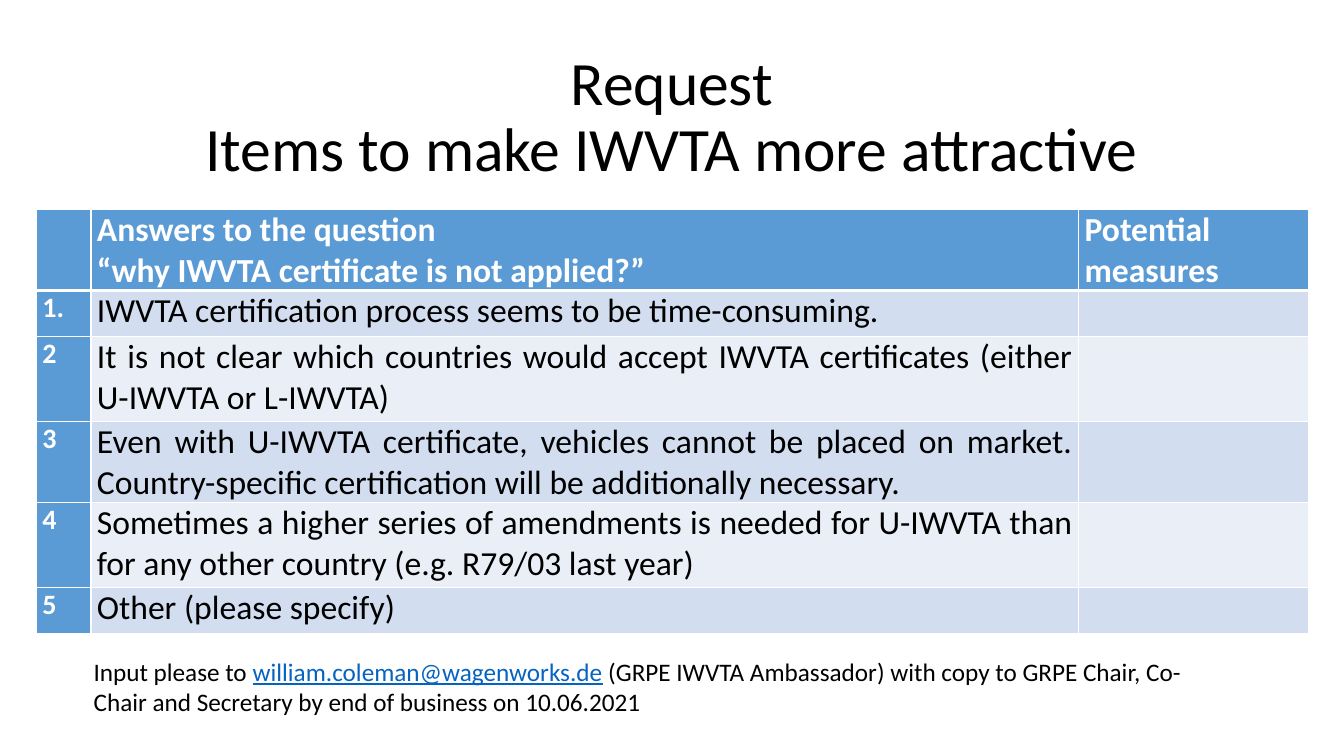
"""Build the slide that asks for items to make IWVTA more attractive."""
from dataclasses import dataclass

import lxml.etree
import pptx
import pptx.dml.color
import pptx.enum.text
import pptx.oxml.ns
import pptx.util

Pt = pptx.util.Pt
ALIGN = pptx.enum.text.PP_ALIGN
ANCHOR = pptx.enum.text.MSO_ANCHOR
COLORS = {
    "black": "000000",
    "white": "FFFFFF",
    "accent": "5B9BD5",
    "odd_row": "D2DEEF",
    "even_row": "EAEFF7",
    "address": "0563C1",
}


@dataclass
class Answer:
    number: str
    text: str
    height: float


HEADER_HEIGHT = 55
COLUMN_WIDTHS = (39, 705.5, 164)
HEADINGS = (
    ("Answers to the question", "“why IWVTA certificate is not applied?”"),
    ("Potential measures",),
)
ANSWERS = (
    Answer("1.", "IWVTA certification process seems to be time-consuming.", 33),
    Answer("2", "It is not clear which countries would accept IWVTA certificates "
           "(either U-IWVTA or L-IWVTA)", 60.5),
    Answer("3", "Even with U-IWVTA certificate, vehicles cannot be placed on market. "
           "Country-specific certification will be additionally necessary.", 58),
    Answer("4", "Sometimes a higher series of amendments is needed for U-IWVTA than "
           "for any other country (e.g. R79/03 last year)", 61),
    Answer("5", "Other (please specify)", 33),
)


def write(paragraph, text: str, size: float = 24, color: str = "black",
          bold: bool = False, underline: bool = False, align=None) -> None:
    if align is not None:
        paragraph.alignment = align
    run = paragraph.add_run()
    run.text = text
    run.font.name = "Calibri"
    run.font.size = Pt(size)
    run.font.bold = bold
    run.font.underline = underline
    run.font.color.rgb = pptx.dml.color.RGBColor.from_string(COLORS[color])


def add_text_frame(slide, left: float, top: float, width: float, height: float,
                   anchor=ANCHOR.TOP):
    box = slide.shapes.add_textbox(Pt(left), Pt(top), Pt(width), Pt(height))
    box.text_frame.word_wrap = True
    box.text_frame.vertical_anchor = anchor
    return box.text_frame


def add_border(cell, side: str, width: float) -> None:
    qn = pptx.oxml.ns.qn
    properties = cell._tc.get_or_add_tcPr()
    line = lxml.etree.SubElement(properties, qn(f"a:ln{side}"), w=str(Pt(width)))
    fill = lxml.etree.SubElement(line, qn("a:solidFill"))
    lxml.etree.SubElement(fill, qn("a:srgbClr"), val=COLORS["white"])


def format_cell(cell, fill: str, top: float, bottom: float) -> None:
    for side, width in (("L", 1), ("R", 1), ("T", top), ("B", bottom)):
        add_border(cell, side, width)
    cell.fill.solid()
    cell.fill.fore_color.rgb = pptx.dml.color.RGBColor.from_string(COLORS[fill])
    cell.margin_left = cell.margin_right = Pt(4.3)
    cell.margin_top = cell.margin_bottom = 0


def add_title(slide) -> None:
    frame = add_text_frame(slide, 66, 32.4, 828, 104.4, ANCHOR.MIDDLE)
    paragraph = frame.paragraphs[0]
    paragraph.line_spacing = 0.9
    write(paragraph, "Request", size=44, align=ALIGN.CENTER)
    paragraph.add_line_break()
    write(paragraph, "Items to make IWVTA more attractive", size=44)


def add_answer_table(slide) -> None:
    heights = [HEADER_HEIGHT] + [answer.height for answer in ANSWERS]
    table = slide.shapes.add_table(
        len(heights), len(COLUMN_WIDTHS), Pt(26), Pt(149.8),
        Pt(sum(COLUMN_WIDTHS)), Pt(sum(heights))).table
    for column, width in zip(table.columns, COLUMN_WIDTHS):
        column.width = Pt(width)
    for index, (row, height) in enumerate(zip(table.rows, heights)):
        row.height = Pt(height)
        body_fill = "odd_row" if index % 2 else "even_row"
        for position, cell in enumerate(row.cells):
            fill = "accent" if index == 0 or position == 0 else body_fill
            format_cell(cell, fill, top=3 if index == 1 else 1,
                        bottom=3 if index == 0 else 1)
    for position, lines in enumerate(HEADINGS, start=1):
        frame = table.cell(0, position).text_frame
        for index, line in enumerate(lines):
            paragraph = frame.add_paragraph() if index else frame.paragraphs[0]
            write(paragraph, line, color="white", bold=True, align=ALIGN.JUSTIFY)
    for index, answer in enumerate(ANSWERS, start=1):
        write(table.cell(index, 0).text_frame.paragraphs[0], answer.number,
              size=20, color="white", bold=True, align=ALIGN.JUSTIFY)
        write(table.cell(index, 1).text_frame.paragraphs[0], answer.text,
              align=ALIGN.JUSTIFY)


def add_contact(slide) -> None:
    paragraph = add_text_frame(slide, 59.8, 465.1, 823.7, 51.1).paragraphs[0]
    write(paragraph, "Input please to ", size=18)
    write(paragraph, "william.coleman@wagenworks.de", size=18, color="address",
          underline=True)
    write(paragraph, " (GRPE IWVTA Ambassador) with copy to GRPE Chair, Co-Chair "
          "and Secretary by end of business on 10.06.2021", size=18)


def main() -> None:
    presentation = pptx.Presentation()
    presentation.slide_width = Pt(960)
    presentation.slide_height = Pt(540)
    slide = presentation.slides.add_slide(presentation.slide_layouts[6])
    add_title(slide)
    add_answer_table(slide)
    add_contact(slide)
    presentation.save("out.pptx")


if __name__ == "__main__":
    main()
